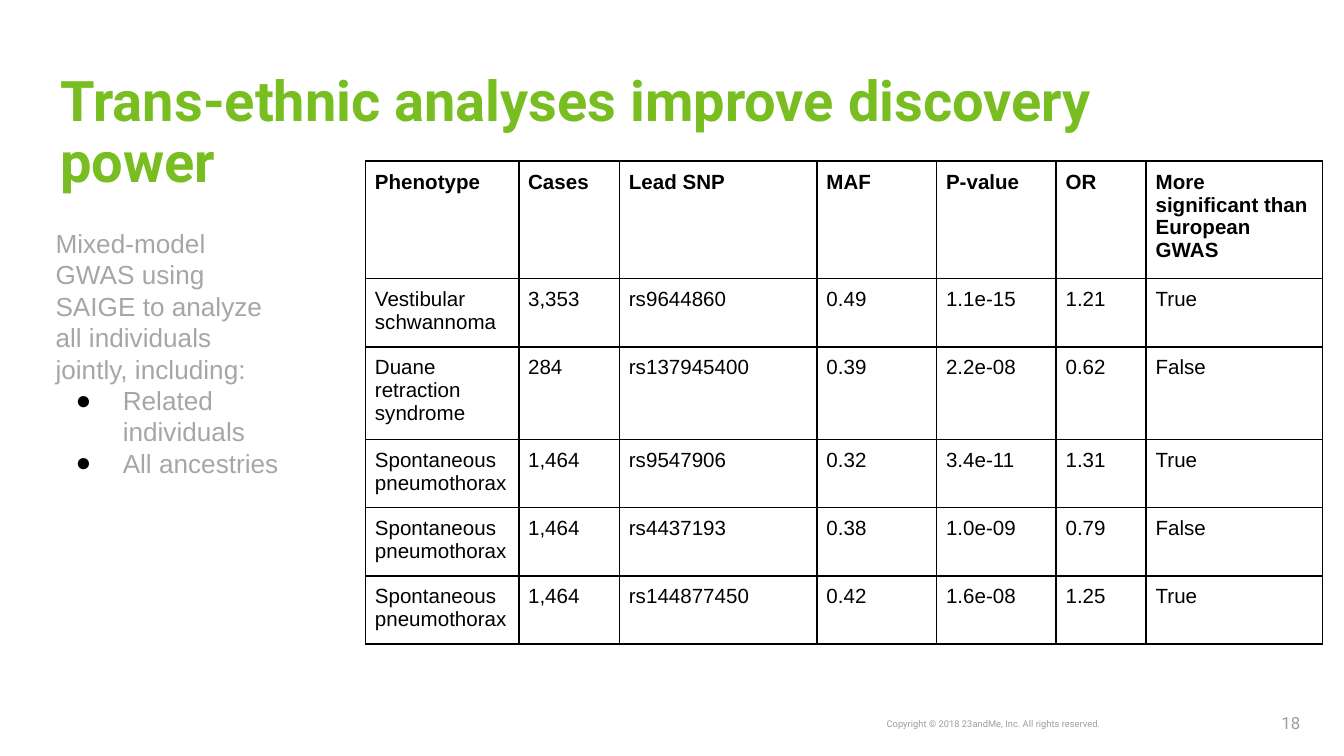
from dataclasses import dataclass

from lxml import etree
from pptx import Presentation
from pptx.dml.color import RGBColor
from pptx.enum.text import MSO_ANCHOR, MSO_AUTO_SIZE, PP_ALIGN
from pptx.oxml.ns import qn
from pptx.util import Inches, Pt

LEFT, CENTER = PP_ALIGN.LEFT, PP_ALIGN.CENTER
TOP, MIDDLE = MSO_ANCHOR.TOP, MSO_ANCHOR.MIDDLE
GROW = MSO_AUTO_SIZE.SHAPE_TO_FIT_TEXT


@dataclass(frozen=True)
class Theme:
    green: str = "78BE20"
    body: str = "A6A6A6"
    footer: str = "9C9EA1"
    black: str = "000000"
    heading_font: str = "Roboto"
    body_font: str = "Arial"
    title_size: int = 30
    body_size: int = 14
    table_size: int = 11
    number_size: int = 9
    copyright_size: int = 5
    border_width: int = 1


THEME = Theme()
WIDTH = 10
HEIGHT = WIDTH * 9 / 16
CELL_INSET = 0.07

# Table grid in inches; each row takes the height of its text
TABLE_LEFT, TABLE_TOP, TABLE_HEIGHT = 2.72, 1.2, 3.4
COLUMNS = (1.14, 0.75, 1.47, 0.89, 0.89, 0.67, 1.31)
RESULTS = (
    ("Phenotype", "Cases", "Lead SNP", "MAF", "P-value", "OR",
     "More significant than European GWAS"),
    ("Vestibular schwannoma", "3,353", "rs9644860", "0.49", "1.1e-15", "1.21", "True"),
    ("Duane retraction syndrome", "284", "rs137945400", "0.39", "2.2e-08", "0.62", "False"),
    ("Spontaneous pneumothorax", "1,464", "rs9547906", "0.32", "3.4e-11", "1.31", "True"),
    ("Spontaneous pneumothorax", "1,464", "rs4437193", "0.38", "1.0e-09", "0.79", "False"),
    ("Spontaneous pneumothorax", "1,464", "rs144877450", "0.42", "1.6e-08", "1.25", "True"),
)


def add_bullet(paragraph, indent=0.5, hanging=0.35):
    properties = paragraph._p.get_or_add_pPr()
    properties.set("marL", str(Inches(indent)))
    properties.set("indent", str(-Inches(hanging)))
    color = etree.SubElement(properties, qn("a:buClr"))
    etree.SubElement(color, qn("a:srgbClr"), val=THEME.black)
    etree.SubElement(properties, qn("a:buFont"), typeface=THEME.body_font)
    etree.SubElement(properties, qn("a:buChar"), char="●")


def write_text(paragraph, text, *, size, color, font=THEME.body_font,
               bold=False, align=LEFT, spacing=None, bullet=False):
    if bullet:
        add_bullet(paragraph)
    paragraph.alignment = align
    if spacing:
        paragraph.line_spacing = spacing
    run = paragraph.add_run()
    run.text = text
    run.font.name = font
    run.font.size = Pt(size)
    run.font.bold = bold
    run.font.color.rgb = RGBColor.from_string(color)


def add_text_box(slide, left, top, width, height, inset, anchor=TOP):
    """Add an empty wrapped box placed by percentages of the slide's size."""
    shape = slide.shapes.add_textbox(
        Inches(left * WIDTH / 100), Inches(top * HEIGHT / 100),
        Inches(width * WIDTH / 100), Inches(height * HEIGHT / 100))
    frame = shape.text_frame
    frame.word_wrap = True
    frame.vertical_anchor = anchor
    frame.margin_left = frame.margin_right = Inches(inset)
    frame.margin_top = frame.margin_bottom = Inches(inset)
    return frame


def add_borders(cell):
    properties = cell._tc.get_or_add_tcPr()
    for position, side in enumerate(("a:lnL", "a:lnR", "a:lnT", "a:lnB")):
        line = etree.Element(qn(side), w=str(Pt(THEME.border_width)))
        fill = etree.SubElement(line, qn("a:solidFill"))
        etree.SubElement(fill, qn("a:srgbClr"), val=THEME.black)
        properties.insert(position, line)


def add_results_table(slide):
    shape = slide.shapes.add_table(
        len(RESULTS), len(COLUMNS), Inches(TABLE_LEFT), Inches(TABLE_TOP),
        Inches(sum(COLUMNS)), Inches(TABLE_HEIGHT))
    table = shape.table
    table.horz_banding = False
    for column, width in zip(table.columns, COLUMNS):
        column.width = Inches(width)
    for row_index, (row, values) in enumerate(zip(table.rows, RESULTS)):
        row.height = 0
        for cell, value in zip(row.cells, values):
            cell.fill.background()
            cell.margin_left = cell.margin_right = Inches(CELL_INSET)
            cell.margin_top = cell.margin_bottom = Inches(CELL_INSET)
            write_text(cell.text_frame.paragraphs[0], value, size=THEME.table_size,
                       color=THEME.black, bold=row_index == 0)
            add_borders(cell)
    # Changing the rows resets the height of the frame
    shape.height = Inches(TABLE_HEIGHT)


def add_method(slide):
    frame = add_text_box(slide, 3.15, 28.3, 18.9, 37.2, inset=0.1)
    frame.auto_size = GROW
    style = {"size": THEME.body_size, "color": THEME.body}
    write_text(frame.paragraphs[0], "Mixed-model GWAS using SAIGE to analyze "
               "all individuals jointly, including:", **style)
    for item in ("Related individuals", "All ancestries"):
        write_text(frame.add_paragraph(), item, bullet=True, **style)


def add_footer(slide):
    items = (
        ("18", THEME.number_size, (94.9, 93.5, 2.3, 4.1)),
        ("Copyright © 2018 23andMe, Inc. All rights reserved.",
         THEME.copyright_size, (65.1, 94.3, 17.7, 2.8)),
    )
    for text, size, place in items:
        frame = add_text_box(slide, *place, inset=0.04, anchor=MIDDLE)
        write_text(frame.paragraphs[0], text, size=size, color=THEME.footer,
                   font=THEME.heading_font, align=CENTER)


def main():
    presentation = Presentation()
    presentation.slide_width = Inches(WIDTH)
    presentation.slide_height = Inches(HEIGHT)
    slide = presentation.slides.add_slide(presentation.slide_layouts[6])

    # Footer, behind the content
    add_footer(slide)

    # Title
    title = add_text_box(slide, 3.8, 8.5, 89.4, 10.3, inset=0.07)
    write_text(title.paragraphs[0], "Trans-ethnic analyses improve discovery power",
               size=THEME.title_size, color=THEME.green, font=THEME.heading_font,
               bold=True, spacing=0.9)

    # Results and method
    add_results_table(slide)
    add_method(slide)

    presentation.save("out.pptx")


if __name__ == "__main__":
    main()
